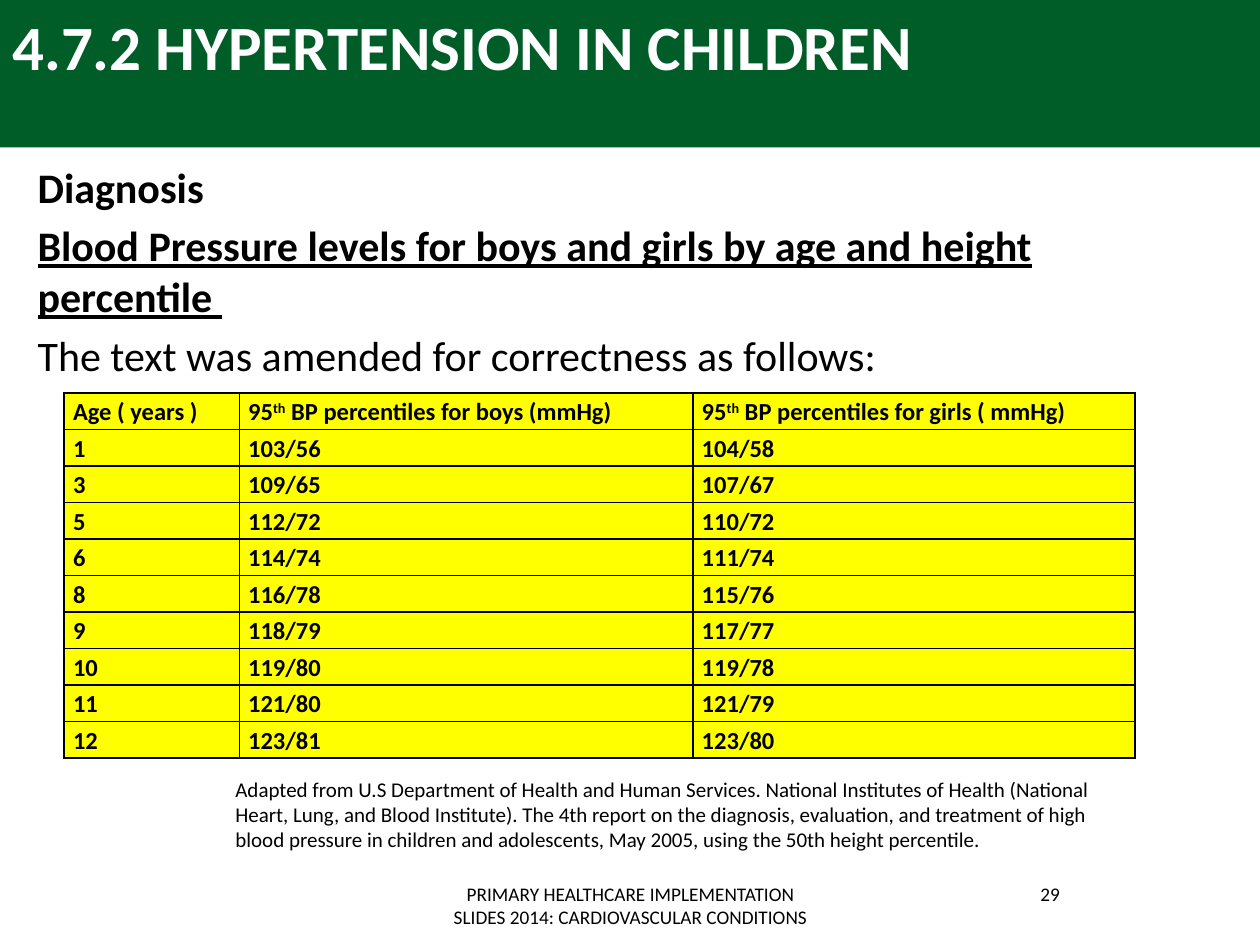
from dataclasses import dataclass

from lxml import etree
from pptx import Presentation
from pptx import util as u
from pptx.dml.color import RGBColor
from pptx.enum import shapes, text
from pptx.oxml import ns

COLORS = {"banner": "005D28", "title": "FFFFFF", "text": "000000", "cell": "FFFF00"}
FONT = "Calibri"
COLUMN_WIDTHS = (1.39, 3.6, 3.51)
ROW_HEIGHT = 0.29
HEADINGS = (
    ("Age ( years )",),
    ("95", "th", " BP percentiles for boys (mmHg)"),
    ("95", "th", " BP percentiles for girls ( mmHg)"),
)


@dataclass(frozen=True)
class Box:
    left: float
    top: float
    width: float
    height: float

    def lengths(self):
        return [u.Inches(n) for n in (self.left, self.top, self.width, self.height)]


@dataclass(frozen=True)
class Reading:
    age: int
    boys: str
    girls: str


READINGS = (
    Reading(1, "103/56", "104/58"),
    Reading(3, "109/65", "107/67"),
    Reading(5, "112/72", "110/72"),
    Reading(6, "114/74", "111/74"),
    Reading(8, "116/78", "115/76"),
    Reading(9, "118/79", "117/77"),
    Reading(10, "119/80", "119/78"),
    Reading(11, "121/80", "121/79"),
    Reading(12, "123/81", "123/80"),
)


def rgb(name: str) -> RGBColor:
    return RGBColor.from_string(COLORS[name])


def write(paragraph, content: str, *, size: float, color: str = "text", bold: bool = False,
          underline: bool = False, superscript: bool = False, align=None, before: float = 0) -> None:
    paragraph.alignment = align
    paragraph.space_before = u.Pt(before)
    run = paragraph.add_run()
    run.text = content
    font = run.font
    font.name, font.size, font.bold = FONT, u.Pt(size), bold
    font.underline = underline
    font.color.rgb = rgb(color)
    if superscript:
        run._r.get_or_add_rPr().set("baseline", "30000")


def add_text_frame(slide, box: Box):
    frame = slide.shapes.add_textbox(*box.lengths()).text_frame
    frame.word_wrap = True
    frame.vertical_anchor = text.MSO_ANCHOR.TOP
    return frame


def add_label(slide, box: Box, content: str, **style) -> None:
    write(add_text_frame(slide, box).paragraphs[0], content, **style)


def add_banner(slide, box: Box) -> None:
    banner = slide.shapes.add_shape(shapes.MSO_SHAPE.RECTANGLE, *box.lengths())
    banner.shadow.inherit = False
    banner.fill.solid()
    banner.fill.fore_color.rgb = rgb("banner")
    banner.line.fill.background()


def add_diagnosis(slide, box: Box) -> None:
    frame = add_text_frame(slide, box)
    lines = (
        ("Diagnosis", True, False),
        ("Blood Pressure levels for boys and girls by age and height percentile ", True, True),
        ("The text was amended for correctness as follows:", False, False),
    )
    for index, (content, bold, underline) in enumerate(lines):
        paragraph = frame.add_paragraph() if index else frame.paragraphs[0]
        write(paragraph, content, size=24, bold=bold, underline=underline, before=4.8)


def set_borders(cell) -> None:
    properties = cell._tc.get_or_add_tcPr()
    for index, side in enumerate(("lnL", "lnR", "lnT", "lnB")):
        line = etree.Element(ns.qn(f"a:{side}"), w=str(u.Pt(1)))
        fill = etree.SubElement(line, ns.qn("a:solidFill"))
        etree.SubElement(fill, ns.qn("a:srgbClr"), val=COLORS["text"])
        properties.insert(index, line)


def fill_cell(cell, parts: tuple[str, ...]) -> None:
    cell.margin_left = cell.margin_right = u.Inches(0.07)
    cell.margin_top = cell.margin_bottom = 0
    cell.fill.solid()
    cell.fill.fore_color.rgb = rgb("cell")
    set_borders(cell)
    paragraph = cell.text_frame.paragraphs[0]
    paragraph.line_spacing = 1.15
    for part in parts:
        write(paragraph, part, size=14, bold=True, superscript=part == "th")


def add_pressure_table(slide, left: float, top: float) -> None:
    rows = [HEADINGS] + [((str(r.age),), (r.boys,), (r.girls,)) for r in READINGS]
    box = Box(left, top, sum(COLUMN_WIDTHS), ROW_HEIGHT * len(rows))
    table = slide.shapes.add_table(len(rows), len(COLUMN_WIDTHS), *box.lengths()).table
    table.first_row = table.horz_banding = False
    for column, width in zip(table.columns, COLUMN_WIDTHS):
        column.width = u.Inches(width)
    for row, entries in zip(table.rows, rows):
        row.height = u.Inches(ROW_HEIGHT)
        for cell, parts in zip(row.cells, entries):
            fill_cell(cell, parts)


def main() -> None:
    presentation = Presentation()
    presentation.slide_width, presentation.slide_height = u.Inches(10), u.Inches(7.5)
    slide = presentation.slides.add_slide(presentation.slide_layouts[6])
    center = text.PP_ALIGN.CENTER

    add_banner(slide, Box(0, 0, 10, 1.17))
    add_label(slide, Box(0, 0.01, 9, 1.25), "4.7.2 HYPERTENSION IN CHILDREN",
              size=36, color="title", bold=True)
    add_diagnosis(slide, Box(0.2, 1.23, 9.53, 5.39))
    add_label(slide, Box(3.42, 6.95, 3.17, 0.4),
              "PRIMARY HEALTHCARE IMPLEMENTATION SLIDES 2014: CARDIOVASCULAR CONDITIONS",
              size=11, align=center)
    add_label(slide, Box(7.17, 6.95, 2.33, 0.4), "29", size=11, align=center)
    add_pressure_table(slide, 0.51, 3.12)
    add_label(slide, Box(1.77, 6.11, 7.24, 0.71),
              "Adapted from U.S Department of Health and Human Services. National Institutes of "
              "Health (National Heart, Lung, and Blood Institute). The 4th report on the diagnosis, "
              "evaluation, and treatment of high blood pressure in children and adolescents, "
              "May 2005, using the 50th height percentile.", size=12)
    presentation.save("out.pptx")


if __name__ == "__main__":
    main()
